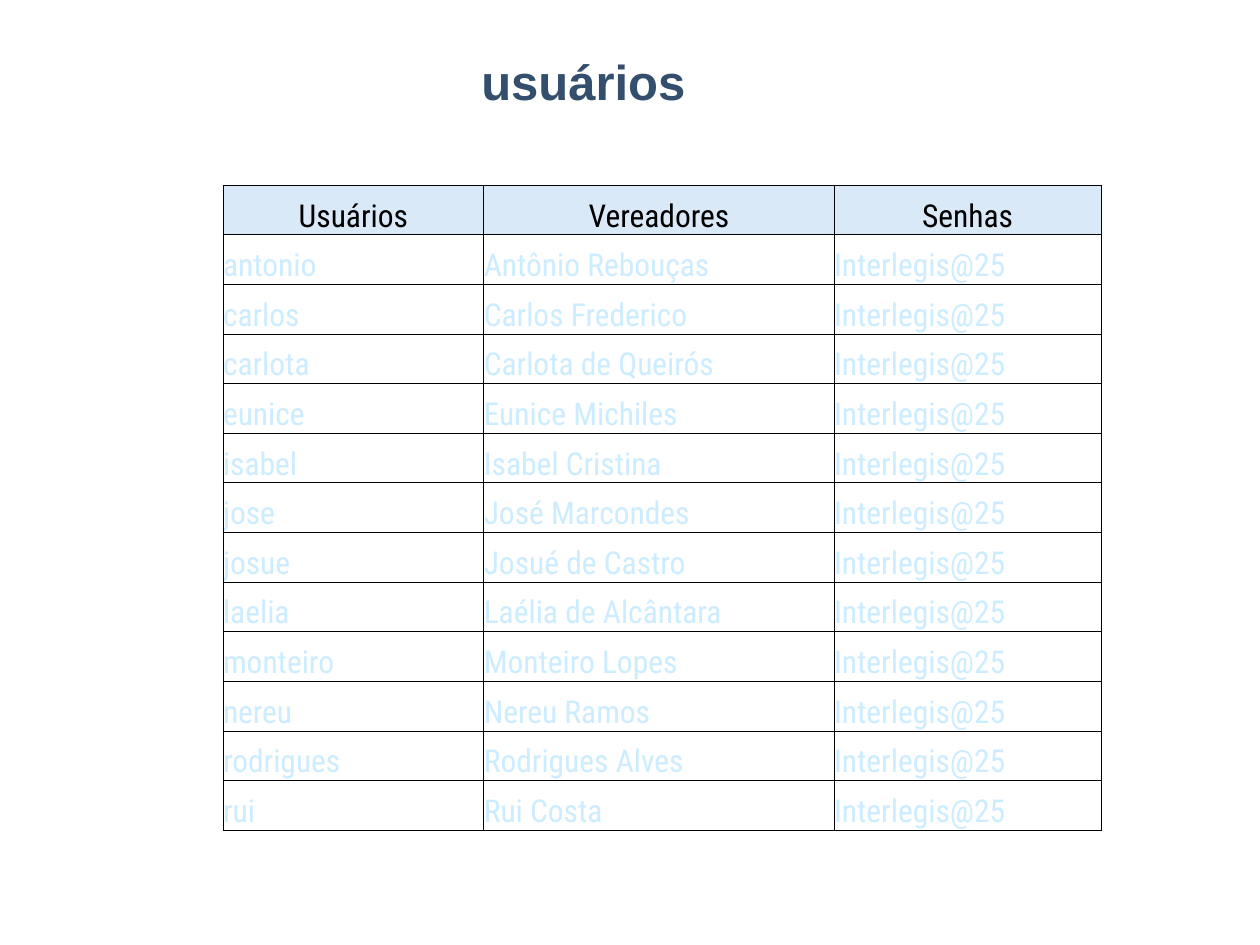
from lxml import etree
from pptx import Presentation
from pptx.dml.color import RGBColor
from pptx.enum import text
from pptx.oxml import ns
from pptx.util import Inches, Pt

TITLE = "usuários"
HEADERS = ("Usuários", "Vereadores", "Senhas")
PASSWORD = "Interlegis@25"
USERS = [
    ("antonio", "Antônio Rebouças"),
    ("carlos", "Carlos Frederico"),
    ("carlota", "Carlota de Queirós"),
    ("eunice", "Eunice Michiles"),
    ("isabel", "Isabel Cristina"),
    ("jose", "José Marcondes"),
    ("josue", "Josué de Castro"),
    ("laelia", "Laélia de Alcântara"),
    ("monteiro", "Monteiro Lopes"),
    ("nereu", "Nereu Ramos"),
    ("rodrigues", "Rodrigues Alves"),
    ("rui", "Rui Costa"),
]
COLUMN_WIDTHS = (2.07, 2.78, 2.12)
TABLE_HEIGHT = 5.12

NAVY = RGBColor(0x34, 0x4E, 0x6D)
BLACK = RGBColor(0x00, 0x00, 0x00)
HEADER_BLUE = RGBColor(0xDA, 0xE9, 0xF8)
PALE_BLUE = RGBColor(0xCC, 0xEC, 0xFF)


def add_span(para, words, font, size, color, bold=False):
    span = para.add_run()
    span.text = words
    span.font.name = font
    span.font.size = Pt(size)
    span.font.bold = bold
    span.font.color.rgb = color


def add_borders(cell):
    properties = cell._tc.get_or_add_tcPr()
    for position, side in enumerate(("lnL", "lnR", "lnT", "lnB")):
        line = etree.Element(ns.qn(f"a:{side}"), w=str(Pt(0.5)))
        fill = etree.SubElement(line, ns.qn("a:solidFill"))
        etree.SubElement(fill, ns.qn("a:srgbClr"), val=str(BLACK))
        properties.insert(position, line)


def fill_cell(cell, words, is_header):
    cell.margin_left = cell.margin_right = 0
    cell.margin_top = cell.margin_bottom = 0
    cell.vertical_anchor = text.MSO_ANCHOR.BOTTOM
    para = cell.text_frame.paragraphs[0]
    if is_header:
        cell.fill.solid()
        cell.fill.fore_color.rgb = HEADER_BLUE
        para.alignment = text.PP_ALIGN.CENTER
    else:
        cell.fill.background()
        para.alignment = text.PP_ALIGN.LEFT
    add_span(para, words, "Roboto Condensed", 18, BLACK if is_header else PALE_BLUE)
    add_borders(cell)


def add_title(page):
    box = page.shapes.add_textbox(Inches(3.71), Inches(0.36), Inches(1.84), Inches(0.57))
    frame = box.text_frame
    frame.word_wrap = False
    frame.auto_size = text.MSO_AUTO_SIZE.SHAPE_TO_FIT_TEXT
    para = frame.paragraphs[0]
    para.alignment = text.PP_ALIGN.CENTER
    add_span(para, TITLE, "Arial", 28, NAVY, bold=True)


def add_user_table(page):
    rows = [HEADERS] + [(*user, PASSWORD) for user in USERS]
    table = page.shapes.add_table(
        len(rows), len(HEADERS), Inches(1.77), Inches(1.47),
        Inches(sum(COLUMN_WIDTHS)), Inches(TABLE_HEIGHT),
    ).table
    table.first_row = table.horz_banding = False
    for column, width in zip(table.columns, COLUMN_WIDTHS):
        column.width = Inches(width)
    for row_index, row in enumerate(rows):
        for column_index, words in enumerate(row):
            fill_cell(table.cell(row_index, column_index), words, row_index == 0)


def main():
    deck = Presentation()
    deck.slide_width, deck.slide_height = Inches(10), Inches(7.5)
    page = deck.slides.add_slide(deck.slide_layouts[6])
    add_title(page)
    add_user_table(page)
    deck.save("out.pptx")


if __name__ == "__main__":
    main()
